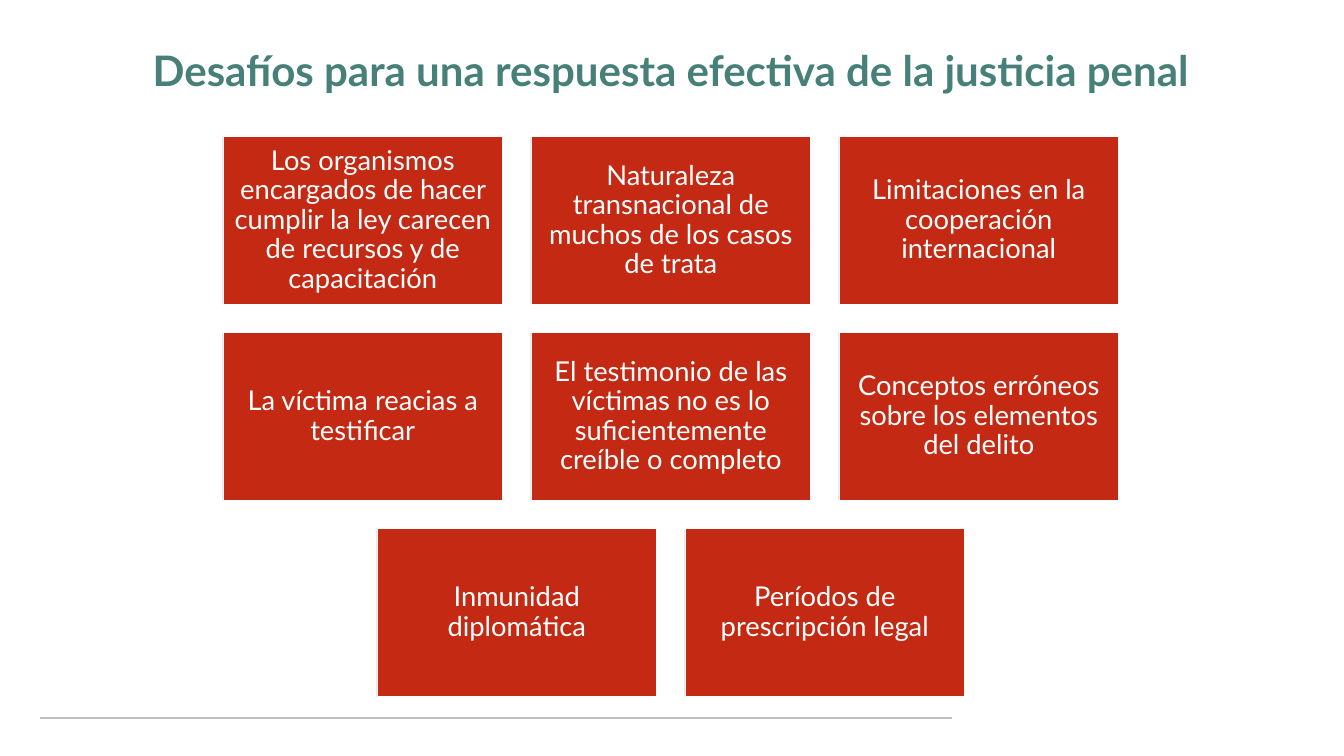
from dataclasses import dataclass

from lxml import etree
from pptx import Presentation
from pptx.dml.color import RGBColor
from pptx.enum.shapes import MSO_CONNECTOR, MSO_SHAPE
from pptx.enum.text import MSO_ANCHOR, MSO_AUTO_SIZE, PP_ALIGN
from pptx.oxml.ns import qn
from pptx.util import Pt

RECTANGLE = MSO_SHAPE.RECTANGLE
STRAIGHT = MSO_CONNECTOR.STRAIGHT
MIDDLE = MSO_ANCHOR.MIDDLE
CENTER = PP_ALIGN.CENTER
NO_AUTOFIT = MSO_AUTO_SIZE.NONE


@dataclass(frozen=True)
class Theme:
    font: str = "Lato"
    title_color: RGBColor = RGBColor(0x46, 0x80, 0x78)
    card_color: RGBColor = RGBColor(0xC4, 0x2A, 0x13)
    white: RGBColor = RGBColor(0xFF, 0xFF, 0xFF)
    rule_color: RGBColor = RGBColor(0xBF, 0xBF, 0xBF)
    title_size: float = 60
    card_size: float = 39


THEME = Theme()
CARD_WIDTH, CARD_HEIGHT, GAP = 399.6, 239.8, 40.3
GRID_CENTER, GRID_TOP = 958, 195.1

TITLE = "Desafíos para una respuesta efectiva de la justicia penal"
CHALLENGE_ROWS = [
    [
        "Los organismos encargados de hacer cumplir la ley carecen de recursos y de capacitación",
        "Naturaleza transnacional de muchos de los casos de trata",
        "Limitaciones en la cooperación internacional",
    ],
    [
        "La víctima reacias a testificar",
        "El testimonio de las víctimas no es lo suficientemente creíble o completo",
        "Conceptos erróneos sobre los elementos del delito",
    ],
    ["Inmunidad diplomática", "Períodos de prescripción legal"],
]


def write_text(frame, text, size, color, margins, bold=False):
    frame.word_wrap = True
    frame.auto_size = NO_AUTOFIT
    frame.vertical_anchor = MIDDLE
    frame.margin_left = frame.margin_right = Pt(margins[0])
    frame.margin_top = frame.margin_bottom = Pt(margins[1])
    paragraph = frame.paragraphs[0]
    paragraph.alignment = CENTER
    paragraph.line_spacing = 0.9
    run = paragraph.add_run()
    run.text = text
    run.font.name = THEME.font
    run.font.size = Pt(size)
    run.font.bold = bold
    run.font.color.rgb = color


def add_footer_rule(slide):
    rule = slide.shapes.add_connector(STRAIGHT, Pt(57.6), Pt(1026), Pt(1359.4), Pt(1026))
    rule.line.color.rgb = THEME.rule_color
    rule.line.width = Pt(2.25)
    etree.SubElement(rule._element.spPr, qn("a:effectLst"))


def place_title(slide):
    title = slide.shapes.title
    title.left, title.top = Pt(57.6), Pt(39.6)
    title.width, title.height = Pt(1800.7), Pt(128.9)
    write_text(title.text_frame, TITLE, THEME.title_size, THEME.title_color, (14.4, 7.2), bold=True)


def add_card(slide, challenge, left, top):
    card = slide.shapes.add_shape(RECTANGLE, Pt(left), Pt(top), Pt(CARD_WIDTH), Pt(CARD_HEIGHT))
    card.shadow.inherit = False
    card.fill.solid()
    card.fill.fore_color.rgb = THEME.card_color
    card.line.color.rgb = THEME.white
    card.line.width = Pt(1)
    write_text(card.text_frame, challenge, THEME.card_size, THEME.white, (11.5, 11.5))


def add_card_grid(slide):
    for row, challenges in enumerate(CHALLENGE_ROWS):
        row_width = len(challenges) * (CARD_WIDTH + GAP) - GAP
        row_left = GRID_CENTER - row_width / 2
        top = GRID_TOP + row * (CARD_HEIGHT + GAP)
        for column, challenge in enumerate(challenges):
            add_card(slide, challenge, row_left + column * (CARD_WIDTH + GAP), top)


def main():
    presentation = Presentation()
    presentation.slide_width = Pt(1919.5)
    presentation.slide_height = Pt(1080)
    slide = presentation.slides.add_slide(presentation.slide_layouts[5])
    add_footer_rule(slide)
    place_title(slide)
    add_card_grid(slide)
    presentation.save("out.pptx")


if __name__ == "__main__":
    main()
